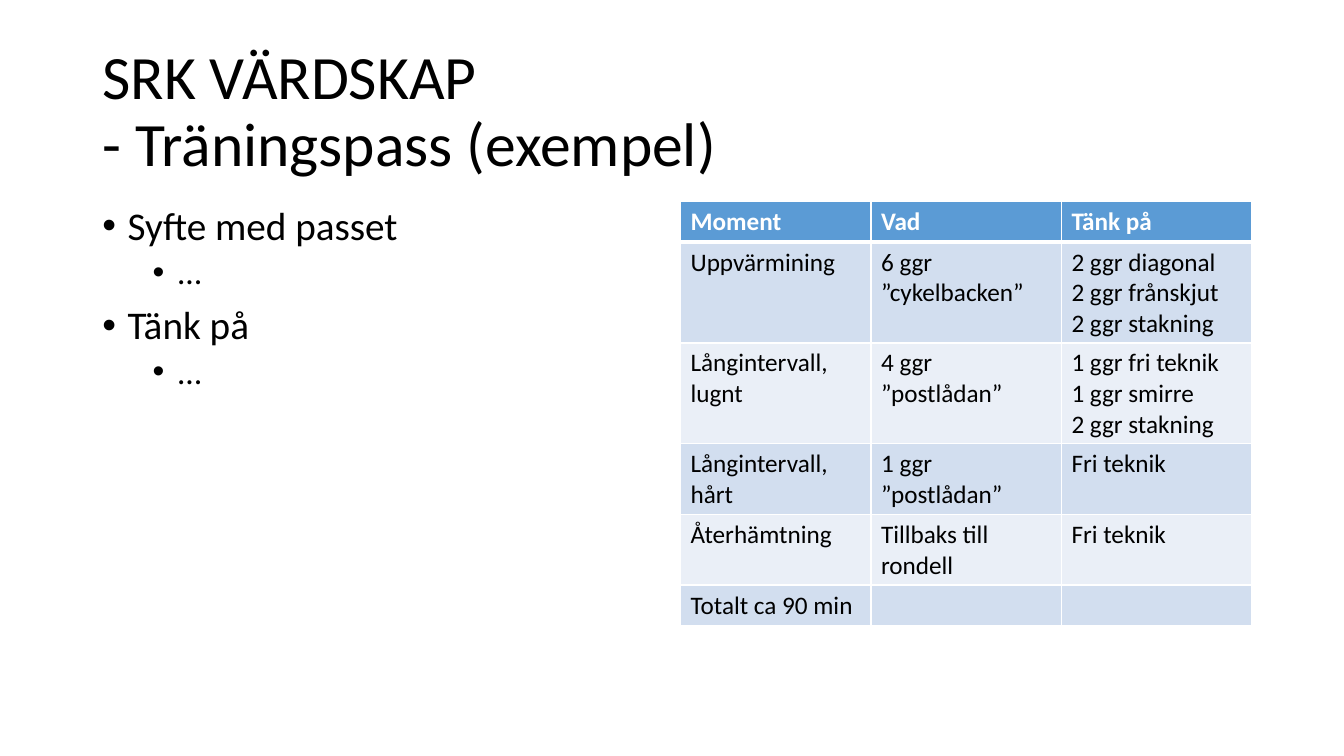
from lxml import etree
from pptx import Presentation
from pptx.dml.color import RGBColor
from pptx.enum.text import MSO_ANCHOR
from pptx.oxml.ns import qn
from pptx.util import Cm, Pt

MIDDLE = MSO_ANCHOR.MIDDLE
TOP = MSO_ANCHOR.TOP


def color(hex_string):
    return RGBColor.from_string(hex_string)


def format_paragraph(paragraph, size, hex_color="000000", bold=False, **spacing):
    """Set the font of every run, and the paragraph attributes given."""
    for name, value in spacing.items():
        setattr(paragraph, name, value)
    for run in paragraph.runs:
        values = {"name": "Calibri", "size": Pt(size), "bold": bold}
        for name, value in values.items():
            setattr(run.font, name, value)
        run.font.color.rgb = color(hex_color)


presentation = Presentation()
presentation.slide_width = Cm(33.87)
presentation.slide_height = Cm(19.05)
slide = presentation.slides.add_slide(presentation.slide_layouts[6])

# Title and body boxes
frames = []
for left, top, width, height, anchor in [
    (2.33, 1.01, 29.21, 3.68, MIDDLE),
    (2.33, 5.07, 14.4, 12.09, TOP),
]:
    box = slide.shapes.add_textbox(Cm(left), Cm(top), Cm(width), Cm(height))
    box.text_frame.word_wrap = True
    box.text_frame.vertical_anchor = anchor
    frames.append(box.text_frame)
title_frame, body_frame = frames

title = title_frame.paragraphs[0]
title.text = "SRK VÄRDSKAP\v- Träningspass (exempel)"
format_paragraph(title, 44, line_spacing=0.9)

# Bulleted list
bullets = [("Syfte med passet", 0), ("…", 1), ("Tänk på", 0), ("…", 1)]
level_formats = [
    {"size": 28, "margin": 0.64, "space": 10},
    {"size": 24, "margin": 1.91, "space": 5},
]
for index, (text, level) in enumerate(bullets):
    level_format = level_formats[level]
    paragraph = body_frame.add_paragraph() if index else body_frame.paragraphs[0]
    paragraph.text = text
    paragraph.level = level
    properties = paragraph._p.get_or_add_pPr()
    properties.set("marL", str(Cm(level_format["margin"])))
    properties.set("indent", str(-Cm(0.64)))
    etree.SubElement(properties, qn("a:buFont"), typeface="Arial")
    etree.SubElement(properties, qn("a:buChar"), char="•")
    space_before = Pt(level_format["space"] if index else 0)
    format_paragraph(paragraph, level_format["size"],
                     line_spacing=0.9, space_before=space_before)

# Training session table
session_rows = [
    ("Moment", "Vad", "Tänk på"),
    ("Uppvärmining", "6 ggr ”cykelbacken”",
     "2 ggr diagonal\n2 ggr frånskjut\n2 ggr stakning"),
    ("Långintervall, lugnt", "4 ggr ”postlådan”",
     "1 ggr fri teknik\n1 ggr smirre\n2 ggr stakning"),
    ("Långintervall, hårt", "1 ggr ”postlådan”", "Fri teknik"),
    ("Återhämtning", "Tillbaks till rondell", "Fri teknik"),
    ("Totalt ca 90 min", "", ""),
]
row_height = Cm(1.03)
table = slide.shapes.add_table(
    len(session_rows), 3, Cm(17.15), Cm(5.07), Cm(14.4),
    row_height * len(session_rows)).table
for column in table.columns:
    column.width = Cm(4.8)

for row_index, texts in enumerate(session_rows):
    is_header = row_index == 0
    band = "D2DEEF" if row_index % 2 else "EAEFF7"
    border_widths = {
        "a:lnL": 1,
        "a:lnR": 1,
        "a:lnT": 3 if row_index == 1 else 1,
        "a:lnB": 3 if is_header else 1,
    }
    for column_index, text in enumerate(texts):
        cell = table.cell(row_index, column_index)
        cell.text = text
        for paragraph in cell.text_frame.paragraphs:
            format_paragraph(paragraph, 18, "FFFFFF" if is_header else "000000",
                             is_header)
        cell_properties = cell._tc.get_or_add_tcPr()
        for tag, width in border_widths.items():
            line = etree.SubElement(cell_properties, qn(tag), w=str(Pt(width)))
            line_fill = etree.SubElement(line, qn("a:solidFill"))
            etree.SubElement(line_fill, qn("a:srgbClr"), val="FFFFFF")
        cell.fill.solid()
        cell.fill.fore_color.rgb = color("5B9BD5" if is_header else band)

presentation.save("out.pptx")
